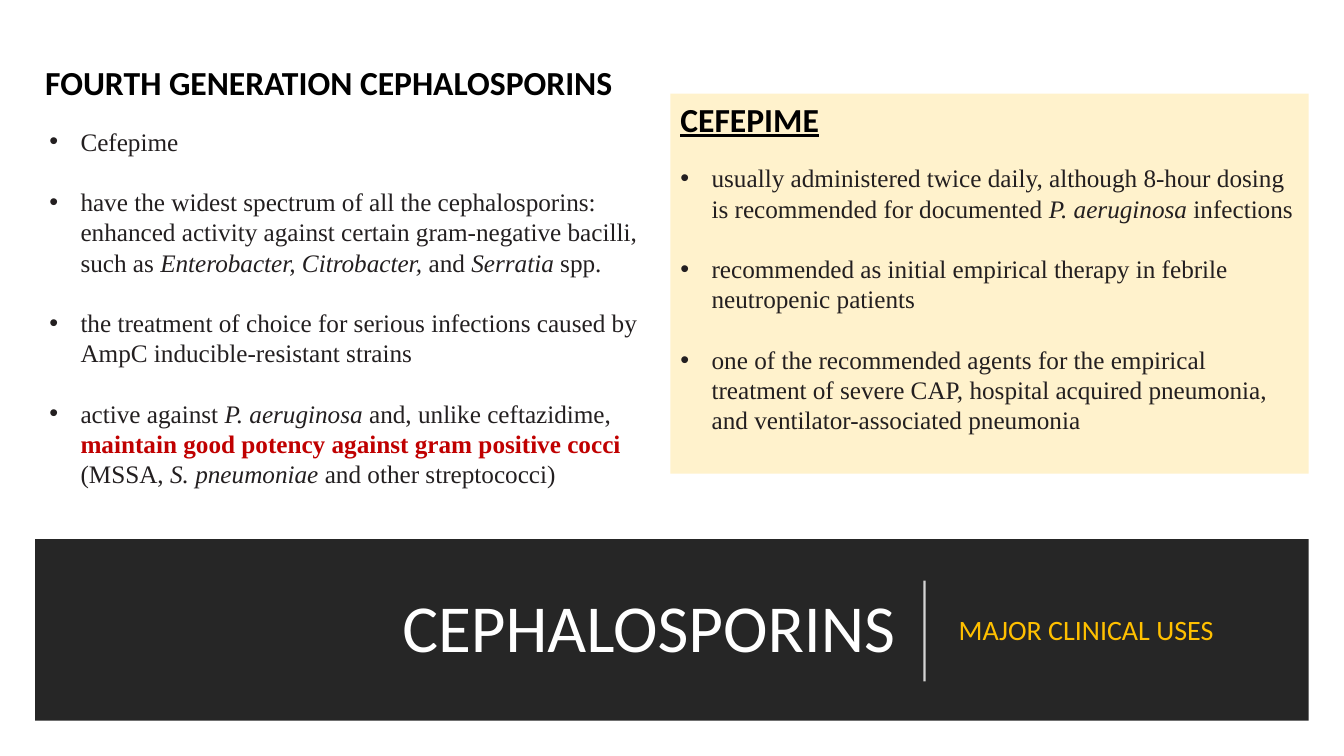
from lxml.etree import SubElement
from pptx import Presentation
from pptx.dml.color import RGBColor
from pptx.enum.shapes import MSO_CONNECTOR, MSO_SHAPE
from pptx.enum.text import MSO_ANCHOR, PP_ALIGN
from pptx.oxml.ns import qn
from pptx.util import Inches, Pt

BLACK, WHITE, BODY, RED = "000000", "FFFFFF", "231F20", "C00000"

FOURTH_GENERATION = [
    [("Cefepime", "")],
    [("have the widest spectrum of all the cephalosporins: enhanced activity "
      "against certain gram-negative bacilli, such as ", ""),
     ("Enterobacter, Citrobacter,", "italic"), (" and ", ""),
     ("Serratia", "italic"), (" spp.", "")],
    [("the treatment of choice for serious infections caused by "
      "AmpC inducible-resistant strains", "")],
    [("active against ", ""), ("P. aeruginosa", "italic"),
     (" and, unlike ceftazidime, ", ""),
     ("maintain good potency against gram positive cocci ", "strong"),
     ("(MSSA, ", ""), ("S. pneumoniae", "italic"),
     (" and other streptococci)", "")],
]
CEFEPIME = [
    [("usually administered twice daily, although 8-hour dosing is "
      "recommended for documented ", ""),
     ("P. aeruginosa", "italic"), (" infections", "")],
    [("recommended as initial empirical therapy in febrile "
      "neutropenic patients", "")],
    [("one of the recommended agents for the empirical treatment of severe "
      "CAP, hospital acquired pneumonia, and ventilator-associated "
      "pneumonia", "")],
]


def color(value):
    return RGBColor.from_string(value)


def set_font(paragraph, name, size, value):
    font = paragraph.font
    font.name, font.size = name, Pt(size)
    font.color.rgb = color(value)


def add_panel(slide, left, top, width, height, fill):
    panel = slide.shapes.add_shape(MSO_SHAPE.RECTANGLE, Inches(left),
                                   Inches(top), Inches(width), Inches(height))
    panel.shadow.inherit = False
    panel.fill.solid()
    panel.fill.fore_color.rgb = color(fill)
    panel.line.fill.background()
    return panel


def add_text_box(slide, left, top, width, height, anchor=MSO_ANCHOR.TOP):
    box = slide.shapes.add_textbox(Inches(left), Inches(top),
                                   Inches(width), Inches(height))
    box.text_frame.word_wrap = True
    box.text_frame.vertical_anchor = anchor
    return box.text_frame


def add_label(slide, left, top, width, height, text, size, value):
    frame = add_text_box(slide, left, top, width, height, MSO_ANCHOR.MIDDLE)
    paragraph = frame.paragraphs[0]
    paragraph.text = text
    paragraph.line_spacing = 0.9
    set_font(paragraph, "Calibri", size, value)
    return paragraph


def write_bullet(paragraph, runs):
    paragraph.alignment = PP_ALIGN.LEFT
    paragraph.line_spacing = Pt(21.6)
    set_font(paragraph, "Times New Roman", 18, BODY)
    properties = paragraph._p.get_or_add_pPr()
    properties.set("marL", str(Inches(0.31)))
    properties.set("indent", str(-Inches(0.31)))
    bullet_font = SubElement(properties, qn("a:buFont"))
    bullet_font.set("typeface", "Arial")
    SubElement(properties, qn("a:buChar")).set("char", "•")
    properties.append(properties.find(qn("a:defRPr")))
    for text, style in runs:
        run = paragraph.add_run()
        run.text = text
        if style == "italic":
            run.font.italic = True
        elif style == "strong":
            run.font.bold = True
            run.font.color.rgb = color(RED)


def write_bullets(frame, first, bullets):
    for index, runs in enumerate(bullets):
        paragraph = first if index == 0 else frame.add_paragraph()
        write_bullet(paragraph, runs)
        if index < len(bullets) - 1:
            paragraph.space_after = Pt(21.6)


def add_generation_column(slide, left, top, width, height):
    heading = add_label(slide, left, top, 11.84, 0.97,
                        "FOURTH GENERATION CEPHALOSPORINS", 24, BLACK)
    heading.font.bold = True
    frame = add_text_box(slide, left + 0.04, top + 0.85, width, height - 0.85)
    write_bullets(frame, frame.paragraphs[0], FOURTH_GENERATION)


def add_cefepime_panel(slide, left, top, width, height):
    frame = add_panel(slide, left, top, width, height, "FFF2CC").text_frame
    frame.word_wrap = True
    frame.vertical_anchor = MSO_ANCHOR.TOP
    heading = frame.paragraphs[0]
    heading.text = "CEFEPIME"
    heading.alignment = PP_ALIGN.LEFT
    heading.space_after = Pt(17)
    set_font(heading, "Calibri", 24, BLACK)
    heading.font.bold = heading.font.underline = True
    write_bullets(frame, frame.add_paragraph(), CEFEPIME)


def add_title_band(slide, left, top, width, height):
    add_panel(slide, left, top, width, height, "262626")
    title = add_label(slide, left + 0.44, top + 0.22, 8.19, 1.38,
                      "CEPHALOSPORINS", 48, WHITE)
    title.alignment = PP_ALIGN.RIGHT
    add_label(slide, left + 9.06, top + 0.22, 3.14, 1.38,
              "MAJOR CLINICAL USES", 20, "FFC000")
    x = Inches(left + 8.82)
    divider = slide.shapes.add_connector(MSO_CONNECTOR.STRAIGHT, x,
                                         Inches(top + 1.41), x,
                                         Inches(top + 0.41))
    divider.line.width = Pt(1.5)
    divider.line.color.rgb = color(WHITE)
    properties = divider._element.spPr
    fill = properties.find(".//" + qn("a:srgbClr"))
    SubElement(fill, qn("a:alpha")).set("val", "80000")
    SubElement(properties, qn("a:effectLst"))


def main():
    presentation = Presentation()
    presentation.slide_width = Inches(13.33)
    presentation.slide_height = Inches(7.5)
    slide = presentation.slides.add_slide(presentation.slide_layouts[6])
    add_title_band(slide, 0.35, 5.35, 12.63, 1.8)
    add_generation_column(slide, 0.35, 0.35, 6.15, 4.59)
    add_cefepime_panel(slide, 6.65, 0.93, 6.33, 3.77)
    presentation.save("out.pptx")


if __name__ == "__main__":
    main()
